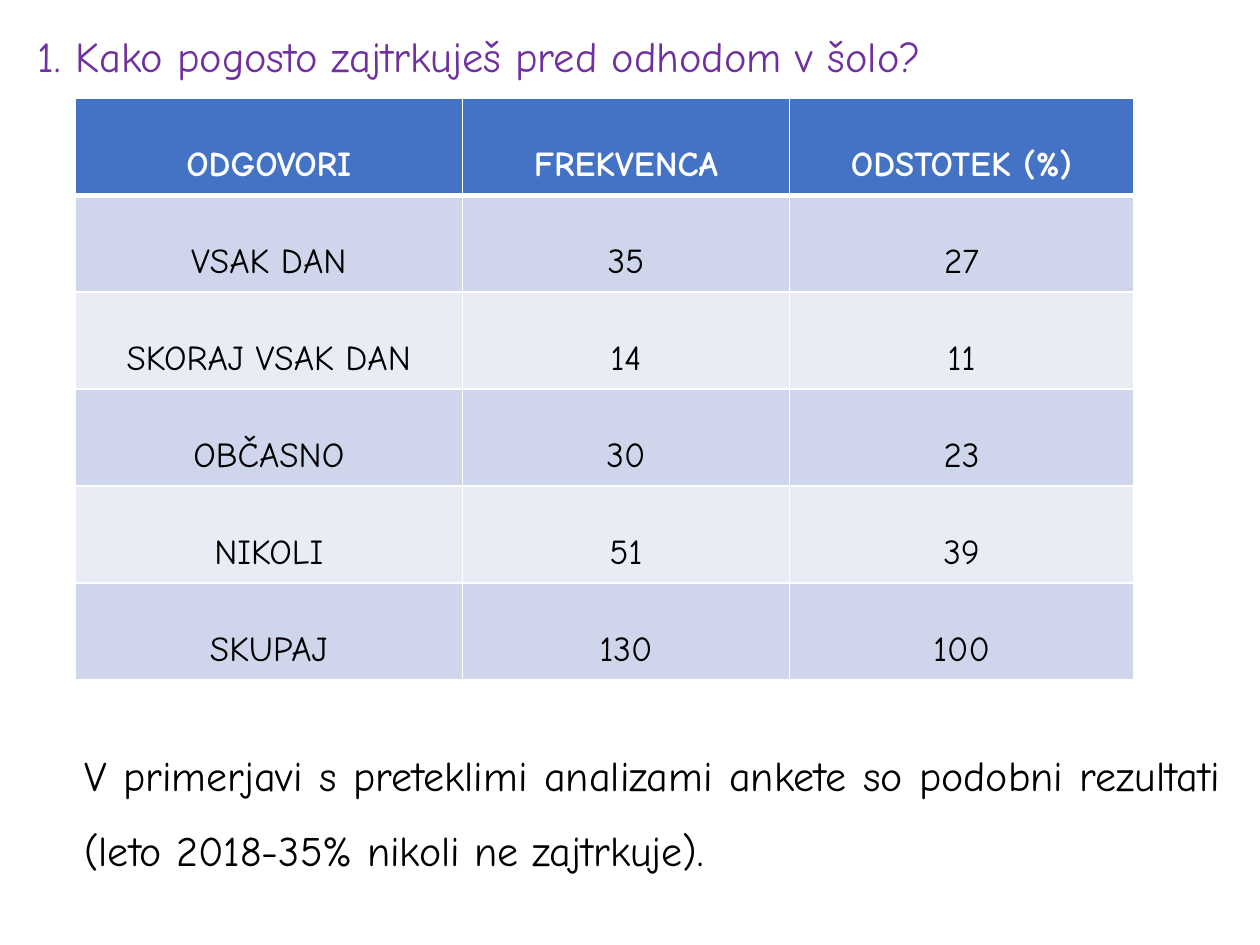
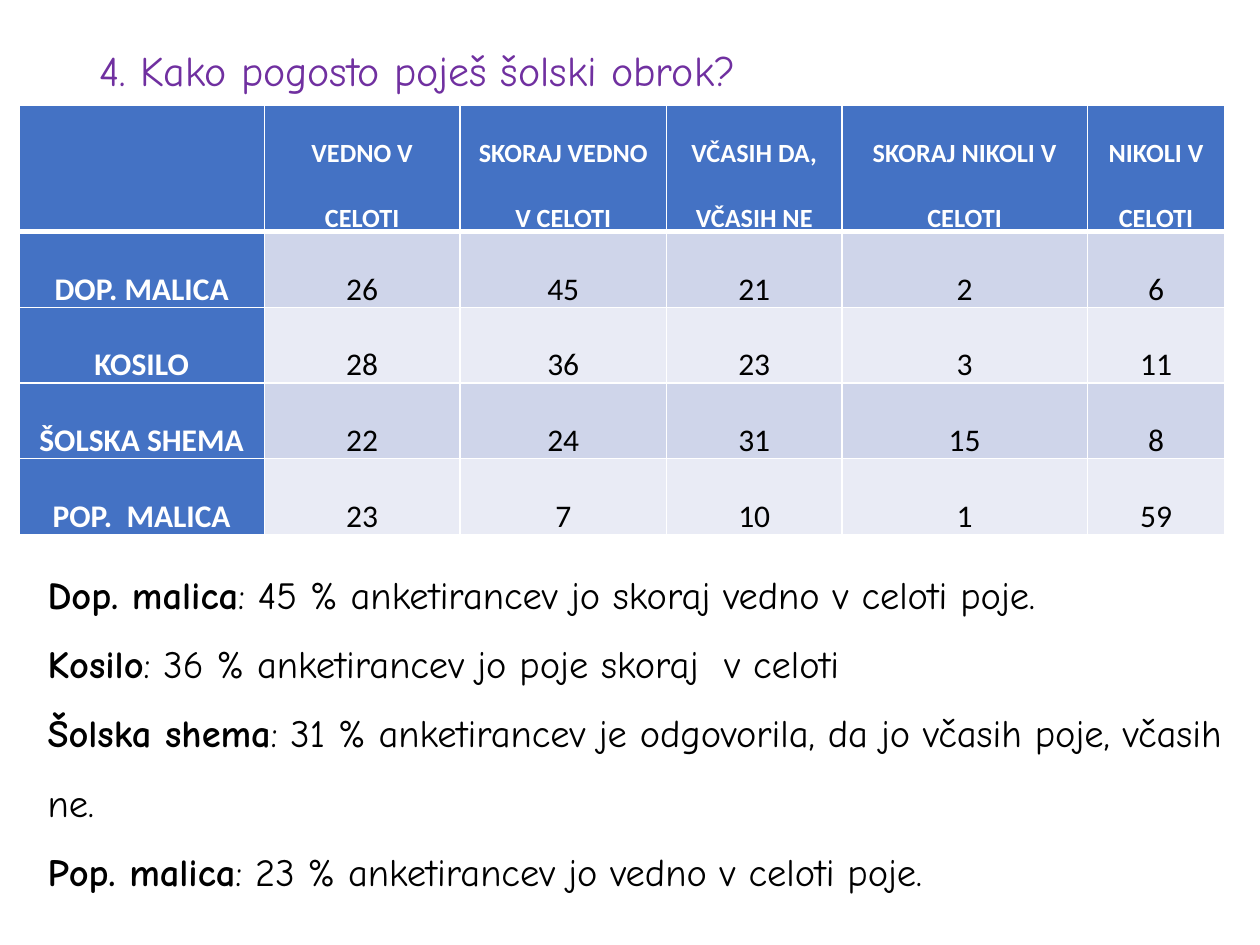
from dataclasses import dataclass

from lxml.etree import SubElement
from pptx import Presentation
from pptx.dml.color import RGBColor as RGB
from pptx.enum.text import MSO_ANCHOR as ANCHOR, MSO_AUTO_SIZE as FIT, PP_ALIGN as ALIGN
from pptx.oxml.ns import qn
from pptx.util import Cm, Pt


@dataclass(frozen=True)
class Theme:
    title: str = "7030A0"
    header: str = "4472C4"
    bands: tuple = ("CFD5EA", "E9EBF5")
    light: str = "FFFFFF"
    dark: str = "000000"
    hand: str = "Comic Neue"
    plain: str = "Calibri"
    grid_line: int = 1
    header_line: int = 3


THEME = Theme()

SLIDES = [
    dict(
        title=dict(text="1. Kako pogosto zajtrkuješ pred odhodom v šolo?",
                   box=(0.51, 0.53, 20.83, 1.75), size=24.3, bottom=0.57),
        table=dict(
            rows=[
                ("ODGOVORI", "FREKVENCA", "ODSTOTEK (%)"),
                ("VSAK DAN", "35", "27"),
                ("SKORAJ VSAK DAN", "14", "11"),
                ("OBČASNO", "30", "23"),
                ("NIKOLI", "51", "39"),
                ("SKUPAJ", "130", "100"),
            ],
            origin=(1.52, 1.98), widths=(7.8, 6.6, 6.93), heights=(1.95, 1.95),
            font=THEME.hand, sizes=(20, 20), margins=(0.25, 0.13), after=0,
            side_header=False),
        notes=dict(
            lines=[("", "V primerjavi s preteklimi analizami ankete so podobni rezultati "
                        "(leto 2018-35% nikoli ne zajtrkuje).")],
            box=(1.45, 14.53, 23.39, 3.18), size=24, anchor=ANCHOR.MIDDLE, align=ALIGN.JUSTIFY),
    ),
    dict(
        title=dict(text="4. Kako pogosto poješ šolski obrok?",
                   box=(1.75, 0.41, 21.89, 2.11), size=24, bottom=0.13),
        table=dict(
            rows=[
                ("", "VEDNO V CELOTI", "SKORAJ VEDNO V CELOTI", "VČASIH DA, VČASIH NE",
                 "SKORAJ NIKOLI V CELOTI", "NIKOLI V CELOTI"),
                ("DOP. MALICA", "26", "45", "21", "2", "6"),
                ("KOSILO", "28", "36", "23", "3", "11"),
                ("ŠOLSKA SHEMA", "22", "24", "31", "15", "8"),
                ("POP.  MALICA", "23", "7", "10", "1", "59"),
            ],
            origin=(0.38, 2.13), widths=(4.95, 3.94, 4.17, 3.53, 4.95, 2.77),
            heights=(2.54, 1.52), font=THEME.plain, sizes=(15, 18), margins=(0.18, 0), after=8,
            side_header=True),
        notes=dict(
            lines=[
                ("Dop. malica", ": 45 % anketirancev jo skoraj vedno v celoti poje."),
                ("Kosilo", ": 36 % anketirancev jo poje skoraj  v celoti"),
                ("Šolska shema", ": 31 % anketirancev je odgovorila, da jo včasih poje, včasih ne."),
                ("Pop. malica", ": 23 % anketirancev jo vedno v celoti poje."),
            ],
            box=(0.71, 10.92, 24.69, 7.32), size=22, anchor=ANCHOR.TOP, align=ALIGN.LEFT),
    ),
]


def write(p, text, *, size, font=THEME.hand, color=THEME.dark, bold=False,
          align=ALIGN.LEFT, spacing=1.0, after=0):
    p.alignment, p.line_spacing = align, spacing
    p.space_before, p.space_after = Pt(0), Pt(after)
    r = p.add_run()
    r.text = text
    r.font.name, r.font.size, r.font.bold = font, Pt(size), bold
    r.font.color.rgb = RGB.from_string(color)


def add_title(slide, text, box, size, bottom):
    sp = slide.shapes.title
    sp.left, sp.top, sp.width, sp.height = map(Cm, box)
    tf = sp.text_frame
    tf.auto_size, tf.vertical_anchor = FIT.NONE, ANCHOR.MIDDLE
    tf.margin_bottom = Cm(bottom)
    write(tf.paragraphs[0], text, size=size, color=THEME.title, spacing=0.9)


def add_notes(slide, lines, box, size, anchor, align):
    tf = slide.shapes.add_textbox(*map(Cm, box)).text_frame
    tf.word_wrap, tf.auto_size, tf.vertical_anchor = True, FIT.SHAPE_TO_FIT_TEXT, anchor
    for i, (lead, rest) in enumerate(lines):
        p = tf.add_paragraph() if i else tf.paragraphs[0]
        for text, bold in ((lead, True), (rest, False)):
            if text:
                write(p, text, size=size, bold=bold, align=align, spacing=1.5)


def set_borders(cell, top, bottom):
    tc_pr = cell._tc.get_or_add_tcPr()
    widths = dict(L=THEME.grid_line, R=THEME.grid_line, T=top, B=bottom)
    for i, (side, width) in enumerate(widths.items()):
        ln = SubElement(tc_pr, qn(f"a:ln{side}"), w=str(Pt(width)))
        SubElement(SubElement(ln, qn("a:solidFill")), qn("a:srgbClr"), val=THEME.light)
        tc_pr.insert(i, ln)


def add_table(slide, rows, origin, widths, heights, font, sizes, margins, after, side_header):
    row_heights = [heights[0]] + [heights[1]] * (len(rows) - 1)
    frame = slide.shapes.add_table(len(rows), len(widths), *map(Cm, origin),
                                   Cm(sum(widths)), Cm(sum(row_heights)))
    table = frame.table
    table.first_col = side_header
    for col, width in zip(table.columns, widths):
        col.width = Cm(width)
    for i, (row, height) in enumerate(zip(rows, row_heights)):
        table.rows[i].height = Cm(height)
        for j, text in enumerate(row):
            cell = table.cell(i, j)
            head = i == 0 or (side_header and j == 0)
            cell.margin_left = cell.margin_right = Cm(margins[0])
            cell.margin_top = cell.margin_bottom = Cm(margins[1])
            cell.fill.solid()
            cell.fill.fore_color.rgb = RGB.from_string(
                THEME.header if head else THEME.bands[(i - 1) % 2])
            set_borders(cell, THEME.header_line if i == 1 else THEME.grid_line,
                        THEME.header_line if i == 0 else THEME.grid_line)
            if text:
                write(cell.text_frame.paragraphs[0], text, size=sizes[min(i, 1)], font=font,
                      color=THEME.light if head else THEME.dark, bold=head,
                      align=ALIGN.CENTER, spacing=2.0, after=after)


def main():
    prs = Presentation()
    prs.slide_width, prs.slide_height = Cm(25.4), Cm(19.05)
    for content in SLIDES:
        slide = prs.slides.add_slide(prs.slide_layouts[5])
        add_title(slide, **content["title"])
        add_notes(slide, **content["notes"])
        add_table(slide, **content["table"])
    prs.save("out.pptx")


if __name__ == "__main__":
    main()
